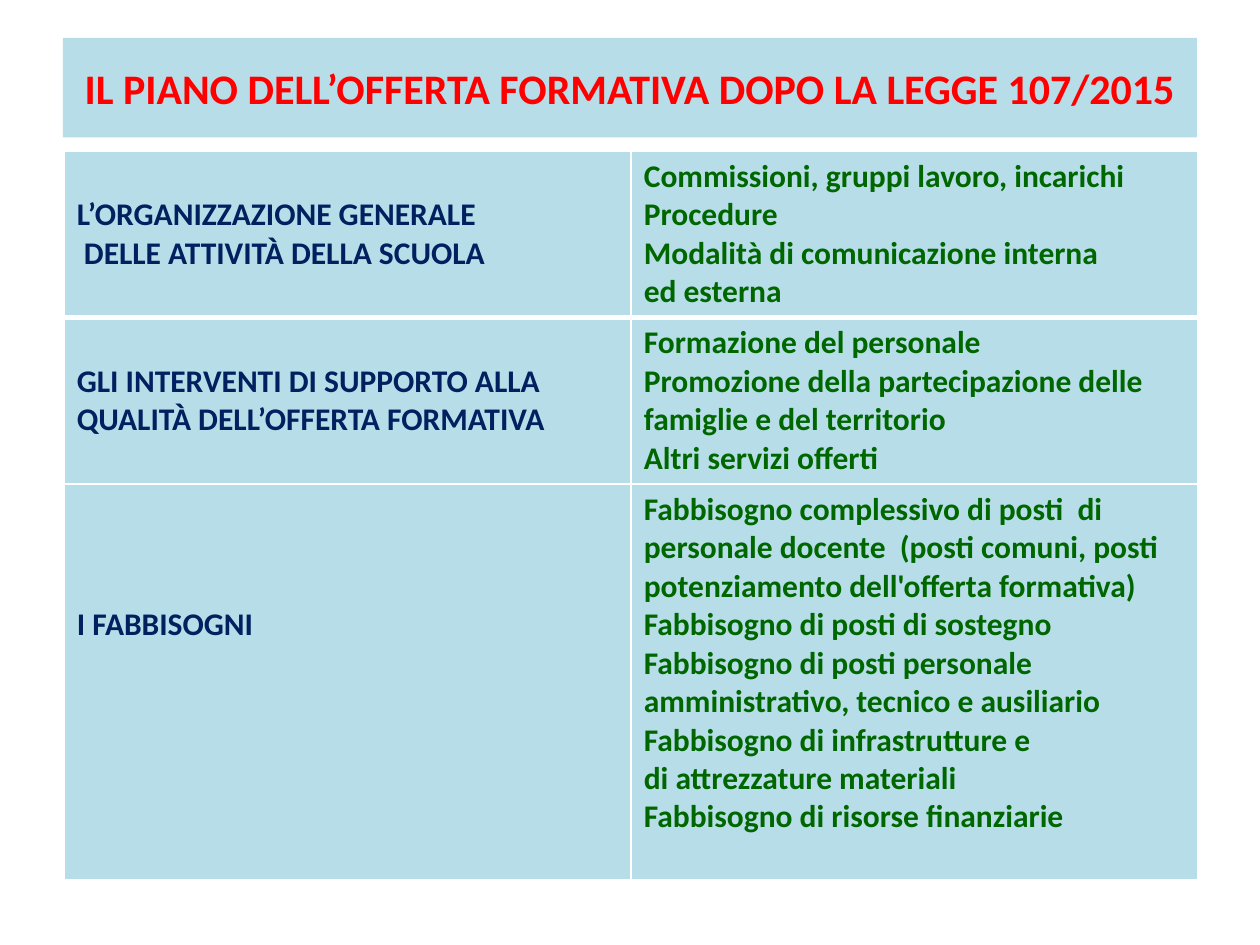
import pptx
import pptx.util
import pptx.dml.color
import pptx.enum.shapes
import pptx.enum.text
import pptx.oxml
import pptx.oxml.ns

PALE_BLUE = pptx.dml.color.RGBColor(0xB7, 0xDE, 0xE8)
RED = pptx.dml.color.RGBColor(0xFF, 0x00, 0x00)
NAVY = pptx.dml.color.RGBColor(0x00, 0x20, 0x60)
GREEN = pptx.dml.color.RGBColor(0x00, 0x66, 0x00)
WHITE = pptx.dml.color.RGBColor(0xFF, 0xFF, 0xFF)

WIDTH, HEIGHT = 10, 7.5
LINE_PITCH = 0.305
CELL_MARGIN = 0.05

TITLE = "IL PIANO DELL’OFFERTA FORMATIVA DOPO LA LEGGE 107/2015"
ROWS = [
    (1.31, 1,
     ["L’ORGANIZZAZIONE GENERALE", " DELLE ATTIVITÀ DELLA SCUOLA"],
     ["Commissioni, gruppi lavoro, incarichi", "Procedure",
      "Modalità di comunicazione interna", "ed esterna"]),
    (1.32, 1,
     ["GLI INTERVENTI DI SUPPORTO ALLA QUALITÀ DELL’OFFERTA FORMATIVA"],
     ["Formazione del personale",
      "Promozione della partecipazione delle famiglie e del territorio",
      "Altri servizi offerti"]),
    (3.14, 3,
     ["I FABBISOGNI"],
     ["Fabbisogno complessivo di posti  di personale docente  "
      "(posti comuni, posti potenziamento dell'offerta formativa)",
      "Fabbisogno di posti di sostegno",
      "Fabbisogno di posti personale amministrativo, tecnico e ausiliario",
      "Fabbisogno di infrastrutture e", "di attrezzature materiali",
      "Fabbisogno di risorse finanziarie"]),
]


class SlideBuilder:
    def __init__(self, deck, font="Calibri"):
        self.page = deck.slides.add_slide(deck.slide_layouts[6])
        self.width, self.height = deck.slide_width, deck.slide_height
        self.font = font

    def frame(self, left, top, width, height):
        return (int(left * self.width), int(top * self.height),
                int(width * self.width), int(height * self.height))

    def fill_text(self, text_frame, lines, size, color, align):
        text_frame.word_wrap = True
        text_frame.text = "\n".join(lines)
        for para in text_frame.paragraphs:
            para.alignment = align
            for span in para.runs:
                span.font.name = self.font
                span.font.size = pptx.util.Pt(size)
                span.font.bold = True
                span.font.color.rgb = color

    def banner(self, text, *share):
        box = self.page.shapes.add_shape(
            pptx.enum.shapes.MSO_SHAPE.RECTANGLE, *self.frame(*share))
        box.shadow.inherit = False
        box.fill.solid()
        box.fill.fore_color.rgb = PALE_BLUE
        box.line.fill.background()
        box.text_frame.vertical_anchor = pptx.enum.text.MSO_ANCHOR.MIDDLE
        self.fill_text(box.text_frame, [text], 24, RED,
                       pptx.enum.text.PP_ALIGN.CENTER)

    def borders(self, cell, top, bottom):
        properties = cell._tc.get_or_add_tcPr()
        sides = {"lnL": 1, "lnR": 1, "lnT": top, "lnB": bottom}
        for index, (side, points) in enumerate(sides.items()):
            properties.insert(index, pptx.oxml.parse_xml(
                f'<a:{side} {pptx.oxml.ns.nsdecls("a")} w="{pptx.util.Pt(points)}">'
                f'<a:solidFill><a:srgbClr val="{WHITE}"/></a:solidFill></a:{side}>'))

    def table(self, rows, *share):
        grid = self.page.shapes.add_table(len(rows), 2, *self.frame(*share)).table
        grid.first_row = grid.horz_banding = False
        for index, (height, offset, topics, details) in enumerate(rows):
            grid.rows[index].height = pptx.util.Inches(height)
            columns = [(topics, NAVY, offset), (details, GREEN, 0)]
            for column, (lines, color, skipped) in enumerate(columns):
                cell = grid.cell(index, column)
                cell.margin_top = pptx.util.Inches(CELL_MARGIN + skipped * LINE_PITCH)
                cell.fill.solid()
                cell.fill.fore_color.rgb = PALE_BLUE
                self.borders(cell, 3 if index == 1 else 1, 3 if index == 0 else 1)
                self.fill_text(cell.text_frame, lines, 18, color,
                               pptx.enum.text.PP_ALIGN.LEFT)


def main():
    deck = pptx.Presentation()
    deck.slide_width = pptx.util.Inches(WIDTH)
    deck.slide_height = pptx.util.Inches(HEIGHT)
    builder = SlideBuilder(deck)
    builder.banner(TITLE, 0.05, 0.3 / HEIGHT, 0.9, 0.79 / HEIGHT)
    table_height = sum(row[0] for row in ROWS)
    builder.table(ROWS, 0.051, 0.16, 0.9, table_height / HEIGHT)
    deck.save("out.pptx")


if __name__ == "__main__":
    main()
